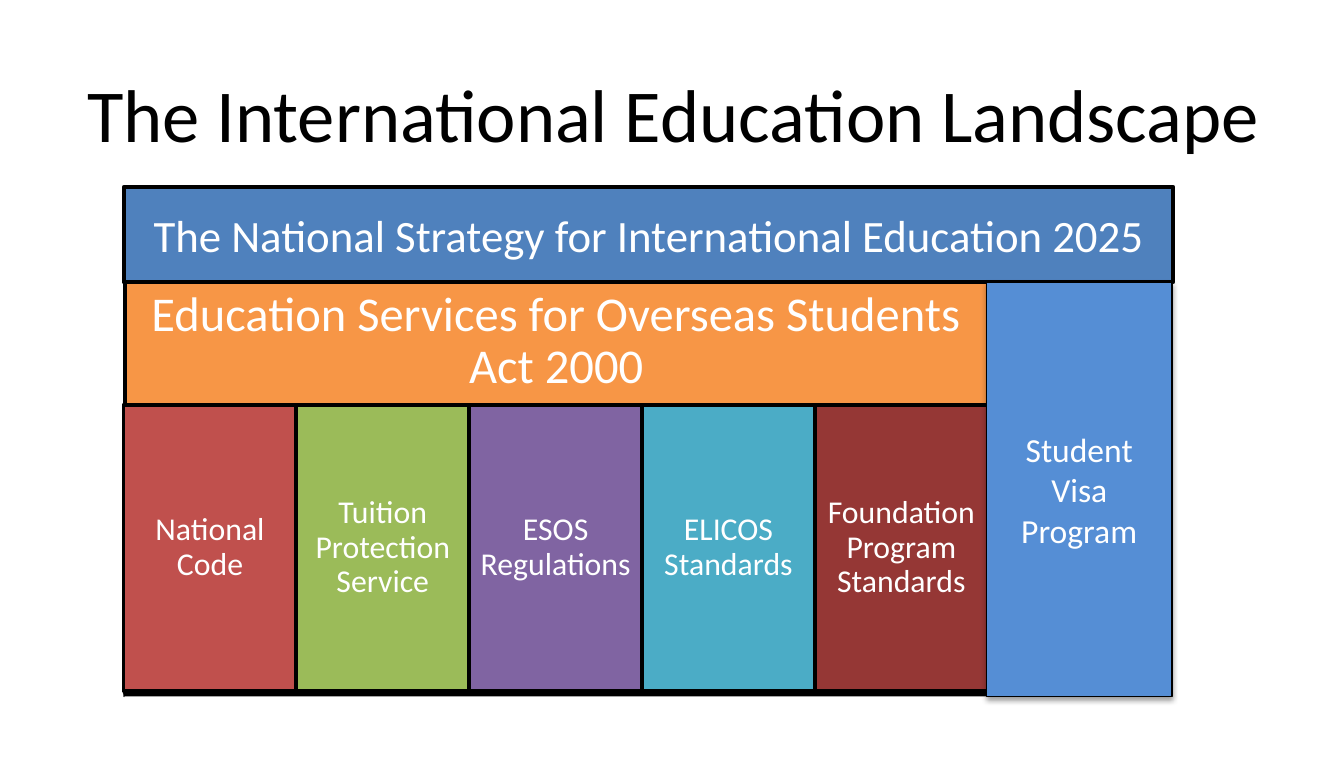
"""Build the slide on the layers of the international education landscape."""
import pptx
import pptx.util
import pptx.oxml.ns
import pptx.dml.color
import pptx.enum.shapes
import pptx.enum.text
import lxml.etree

HUES = {
    "black": "000000", "white": "FFFFFF", "orange": "F79646", "red": "C0504D",
    "green": "9BBB59", "purple": "8064A2", "teal": "4BACC6", "maroon": "953735",
    "navy": "4F81BD", "blue": "558ED5",
}
KINDS = pptx.enum.shapes.MSO_SHAPE


class Deck:
    font = "Calibri"
    cols, rows = 100, 56.3

    def __init__(self):
        self.show = pptx.Presentation()
        self.show.slide_width = pptx.util.Inches(10)
        self.show.slide_height = pptx.util.Inches(5.63)
        self.slide = self.show.slides.add_slide(self.show.slide_layouts[6])

    def place(self, col, row, wide, high):
        dx = self.show.slide_width / self.cols
        dy = self.show.slide_height / self.rows
        return [round(n) for n in (col * dx, row * dy, wide * dx, high * dy)]

    def hue(self, name):
        return pptx.dml.color.RGBColor.from_string(HUES[name])

    def label(self, shape, text, size, color="white", inset=None, lead=None):
        frame = shape.text_frame
        frame.word_wrap = True
        frame.vertical_anchor = pptx.enum.text.MSO_ANCHOR.MIDDLE
        if inset is not None:
            pad = pptx.util.Inches(inset)
            frame.margin_left = frame.margin_right = pad
            frame.margin_top = frame.margin_bottom = pad
        para = frame.paragraphs[0]
        para.alignment = pptx.enum.text.PP_ALIGN.CENTER
        if lead is not None:
            para.line_spacing = lead
        run = para.add_run()
        run.text = text
        run.font.name = self.font
        run.font.size = pptx.util.Pt(size)
        run.font.color.rgb = self.hue(color)

    def title(self, spot, text, size):
        box = self.slide.shapes.add_textbox(*self.place(*spot))
        self.label(box, text, size, "black")

    def block(self, spot, fill, line=2, kind=KINDS.RECTANGLE):
        shape = self.slide.shapes.add_shape(kind, *self.place(*spot))
        shape.shadow.inherit = False
        shape.fill.solid()
        shape.fill.fore_color.rgb = self.hue(fill)
        shape.line.color.rgb = self.hue("black")
        shape.line.width = pptx.util.Pt(line)
        return shape

    def shade(self, shape):
        tag = pptx.oxml.ns.qn
        glow = shape._element.spPr.find(tag("a:effectLst"))
        drop = lxml.etree.SubElement(
            glow, tag("a:outerShdw"), blurRad=str(pptx.util.Pt(3.1)),
            dist=str(pptx.util.Pt(1.6)), dir="5400000", rotWithShape="0")
        tint = lxml.etree.SubElement(drop, tag("a:srgbClr"), val=HUES["black"])
        lxml.etree.SubElement(tint, tag("a:alpha"), val="38000")


def main():
    deck = Deck()
    deck.title((5.1, 3.7, 90, 9.4), "The International Education Landscape", 40)

    act = deck.block((9.3, 20.3, 64.2, 10.2), "orange")
    deck.label(act, "Education Services for Overseas Students Act 2000", 26,
               inset=0.11, lead=0.9)

    pillars = [
        ("National Code", "red"),
        ("Tuition Protection Service", "green"),
        ("ESOS Regulations", "purple"),
        ("ELICOS Standards", "teal"),
        ("Foundation Program Standards", "maroon"),
    ]
    step = 12.86
    for i, (text, fill) in enumerate(pillars):
        pillar = deck.block((9.2 + i * step, 30.1, step, 21.3), fill)
        deck.label(pillar, text, 17, inset=0.07, lead=0.9)

    deck.block((9.2, 51.4, 64.4, 0.4), "black", 0.75, KINDS.DOUBLE_BRACE)

    plan = deck.block((9.2, 13.9, 78.1, 7.1), "navy")
    deck.label(plan, "The National Strategy for International Education 2025", 24)

    visa = deck.block((73.4, 21, 13.8, 30.8), "blue", 0.75)
    deck.shade(visa)
    deck.label(visa, "Student Visa Program", 18)

    deck.show.save("out.pptx")


if __name__ == "__main__":
    main()
